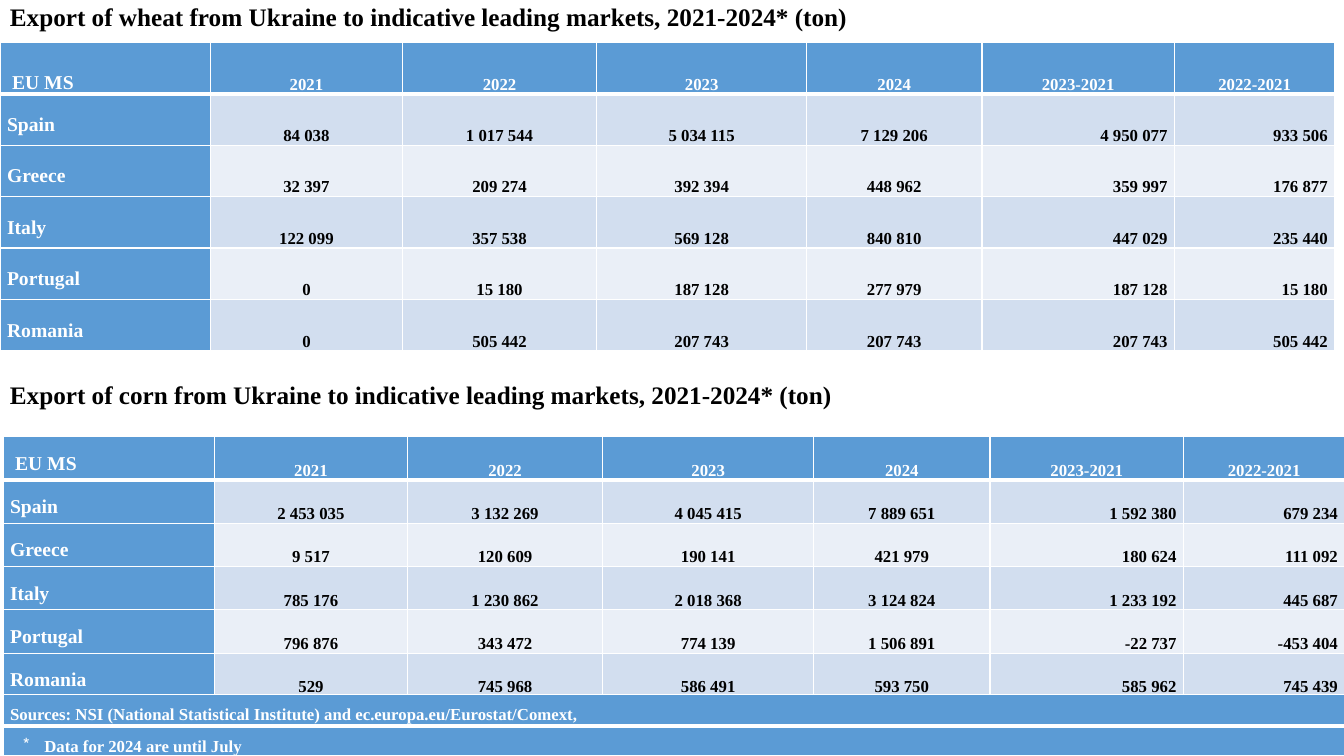
from lxml.etree import SubElement
from pptx import Presentation
from pptx.dml.color import RGBColor
from pptx.enum.text import MSO_ANCHOR, MSO_AUTO_SIZE, PP_ALIGN
from pptx.oxml.ns import qn
from pptx.util import Inches, Pt

BLUE, WHITE, BLACK = "5B9BD5", "FFFFFF", "000000"
BANDS = ("EAEFF7", "D2DEEF")
HEADINGS = ("EU MS", "2021", "2022", "2023", "2024", "2023-2021", "2022-2021")
WHEAT = (
    HEADINGS,
    ("Spain", "84 038", "1 017 544", "5 034 115", "7 129 206", "4 950 077", "933 506"),
    ("Greece", "32 397", "209 274", "392 394", "448 962", "359 997", "176 877"),
    ("Italy", "122 099", "357 538", "569 128", "840 810", "447 029", "235 440"),
    ("Portugal", "0", "15 180", "187 128", "277 979", "187 128", "15 180"),
    ("Romania", "0", "505 442", "207 743", "207 743", "207 743", "505 442"),
)
CORN = (
    HEADINGS,
    ("Spain", "2 453 035", "3 132 269", "4 045 415", "7 889 651", "1 592 380", "679 234"),
    ("Greece", "9 517", "120 609", "190 141", "421 979", "180 624", "111 092"),
    ("Italy", "785 176", "1 230 862", "2 018 368", "3 124 824", "1 233 192", "445 687"),
    ("Portugal", "796 876", "343 472", "774 139", "1 506 891", "-22 737", "-453 404"),
    ("Romania", "529", "745 968", "586 491", "593 750", "585 962", "745 439"),
)


def color(value):
    """Turn a hex string into a colour."""
    return RGBColor.from_string(value)


class ExportSlide:
    """Hold the style and the slide that receives the elements."""

    font_name = "Times New Roman"

    def __init__(self, slide):
        """Keep the slide to draw on."""
        self.slide = slide

    def style(self, paragraph, size, text_color):
        """Apply the shared bold font to a paragraph."""
        font = paragraph.font
        font.name, font.size, font.bold = self.font_name, Pt(size), True
        font.color.rgb = color(text_color)

    def title(self, text, top):
        """Add a full-width title."""
        shape = self.slide.shapes.add_textbox(0, Inches(top), Inches(13.33), Inches(0.4))
        frame = shape.text_frame
        frame.word_wrap = True
        frame.auto_size = MSO_AUTO_SIZE.SHAPE_TO_FIT_TEXT
        frame.text = text
        self.style(frame.paragraphs[0], 18, BLACK)

    def table(self, left, top, widths, heights):
        """Add an empty table with the given columns and rows."""
        frame = self.slide.shapes.add_table(
            len(heights), len(widths), Inches(left), Inches(top),
            Inches(sum(widths)), Inches(sum(heights)))
        table = frame.table
        for column, width in zip(table.columns, widths):
            column.width = Inches(width)
        for row, height in zip(table.rows, heights):
            row.height = Inches(height)
        return table

    def borders(self, cell, row):
        """Draw white cell borders, heavy below the first row."""
        properties = cell._tc.get_or_add_tcPr()
        heavy_edge = {0: "lnB", 1: "lnT"}.get(row)
        for edge in ("lnL", "lnR", "lnT", "lnB"):
            width = Pt(3 if edge == heavy_edge else 1)
            line = SubElement(properties, qn(f"a:{edge}"), w=str(width))
            fill = SubElement(line, qn("a:solidFill"))
            SubElement(fill, qn("a:srgbClr"), val=WHITE)

    def cell(self, table, row, column, text, fill=BLUE, size=12, text_color=WHITE,
             alignment=PP_ALIGN.LEFT, anchor=MSO_ANCHOR.BOTTOM):
        """Fill one table cell and return its paragraph."""
        cell = table.cell(row, column)
        self.borders(cell, row)
        cell.fill.solid()
        cell.fill.fore_color.rgb = color(fill)
        cell.margin_left = cell.margin_right = Inches(0.07)
        cell.margin_top = cell.margin_bottom = 0
        cell.vertical_anchor = anchor
        cell.text = text
        paragraph = cell.text_frame.paragraphs[0]
        paragraph.alignment = alignment
        paragraph.line_spacing = 1.5
        self.style(paragraph, size, text_color)
        return paragraph

    def indent(self, paragraph, margin, first_line=0):
        """Indent a paragraph and return its properties."""
        properties = paragraph._p.get_or_add_pPr()
        properties.set("marL", str(Inches(margin)))
        properties.set("indent", str(Inches(first_line)))
        return properties

    def exports(self, left, top, widths, row_height, rows, corner_anchor):
        """Add a table of exports by country and year."""
        table = self.table(left, top, widths, [row_height] * len(rows))
        for row, values in enumerate(rows):
            for column, text in enumerate(values):
                if column == 0:
                    anchor = MSO_ANCHOR.MIDDLE if row else corner_anchor
                    paragraph = self.cell(table, row, column, text, size=14, anchor=anchor)
                    if row == 0:
                        self.indent(paragraph, 0.05)
                elif row == 0:
                    self.cell(table, row, column, text, alignment=PP_ALIGN.CENTER)
                else:
                    alignment = PP_ALIGN.RIGHT if column > 4 else PP_ALIGN.CENTER
                    self.cell(table, row, column, text, BANDS[row % 2],
                              text_color=BLACK, alignment=alignment)

    def sources(self, left, top, source, note):
        """Add the source line and the starred note."""
        table = self.table(left, top, [13.33], [0.31, 0.3])
        self.cell(table, 0, 0, source, anchor=MSO_ANCHOR.MIDDLE)
        properties = self.indent(self.cell(table, 1, 0, note), 0.34, -0.21)
        bullet = properties.makeelement(qn("a:buChar"), {"char": "*"})
        properties.find(qn("a:defRPr")).addprevious(bullet)


def main():
    """Build and save the slide."""
    presentation = Presentation()
    presentation.slide_width, presentation.slide_height = Inches(13.33), Inches(7.5)
    page = ExportSlide(presentation.slides.add_slide(presentation.slide_layouts[6]))
    page.title("Export of wheat from Ukraine to indicative leading markets, 2021-2024* (ton)", -0.04)
    page.exports(0, 0.42, [2.09, 1.9, 1.93, 2.08, 1.74, 1.91, 1.59], 0.51, WHEAT, MSO_ANCHOR.BOTTOM)
    page.title("Export of corn from Ukraine to indicative leading markets, 2021-2024* (ton)", 3.71)
    page.exports(0.03, 4.33, [2.1, 1.91, 1.94, 2.09, 1.75, 1.92, 1.6], 0.43, CORN, MSO_ANCHOR.MIDDLE)
    page.sources(0.03, 6.89,
                 "Sources: NSI (National Statistical Institute) and ec.europa.eu/Eurostat/Comext,",
                 "Data for 2024 are until July")
    presentation.save("out.pptx")


if __name__ == "__main__":
    main()
